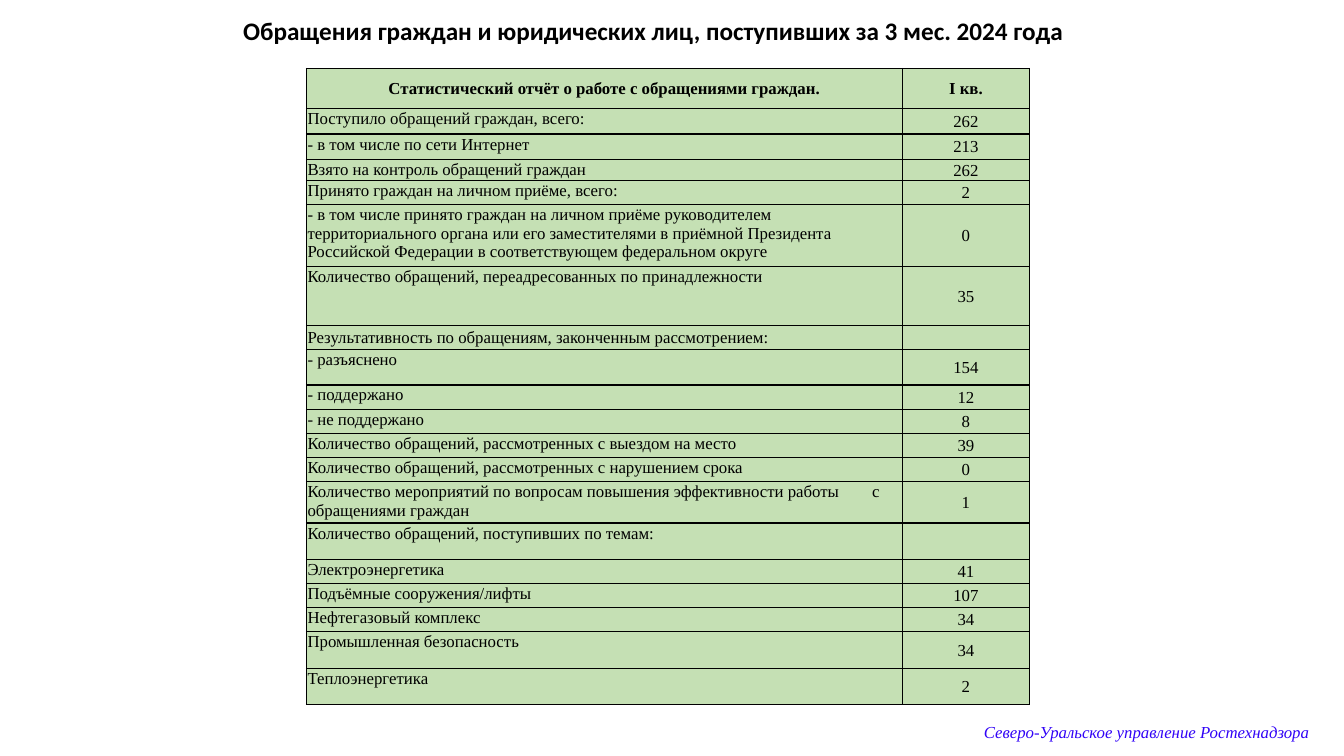
from lxml import etree
from pptx import Presentation
from pptx.dml.color import RGBColor
from pptx.enum import text
from pptx.oxml import ns
from pptx.util import Inches, Pt

SERIF = "Times New Roman"
BLACK, GREEN, BLUE = "000000", "C5E0B4", "3103F7"
HEADER = ("Статистический отчёт о работе с обращениями граждан.", "I кв.", 0.4)
# Indicator, value for the quarter, row height
INDICATORS = [
    ("Поступило обращений граждан, всего:", "262", 0.25),
    ("- в том числе по сети Интернет", "213", 0.25),
    ("Взято на контроль обращений граждан", "262", 0.21),
    ("Принято граждан на личном приёме, всего:", "2", 0.24),
    ("- в том числе принято граждан на личном приёме руководителем "
     "территориального органа или его заместителями в приёмной Президента "
     "Российской Федерации в соответствующем федеральном округе", "0", 0.54),
    ("Количество обращений, переадресованных по принадлежности", "35", 0.59),
    ("Результативность по обращениям, законченным рассмотрением:", "", 0.24),
    ("- разъяснено", "154", 0.35),
    ("- поддержано", "12", 0.24),
    ("- не поддержано", "8", 0.24),
    ("Количество обращений, рассмотренных с выездом на место", "39", 0.24),
    ("Количество обращений, рассмотренных с нарушением срока", "0", 0.24),
    ("Количество мероприятий по вопросам повышения эффективности работы\tс "
     "обращениями граждан", "1", 0.36),
    ("Количество обращений, поступивших по темам:", "", 0.36),
    ("Электроэнергетика", "41", 0.24),
    ("Подъёмные сооружения/лифты", "107", 0.24),
    ("Нефтегазовый комплекс", "34", 0.24),
    ("Промышленная безопасность", "34", 0.36),
    ("Теплоэнергетика", "2", 0.36),
]


def color(value):
    return RGBColor.from_string(value)


def set_font(paragraph, name, size, fill, bold=False, italic=False):
    font = paragraph.font
    font.name, font.size, font.bold, font.italic = name, Pt(size), bold, italic
    font.color.rgb = color(fill)


def add_borders(cell, fill, width):
    properties = cell._tc.get_or_add_tcPr()
    for index, side in enumerate(("a:lnL", "a:lnR", "a:lnT", "a:lnB")):
        line = etree.Element(ns.qn(side), w=str(Pt(width)))
        solid = etree.SubElement(line, ns.qn("a:solidFill"))
        etree.SubElement(solid, ns.qn("a:srgbClr"), val=fill)
        properties.insert(index, line)


def add_tab_stop(paragraph, position):
    stops = etree.SubElement(paragraph._p.get_or_add_pPr(), ns.qn("a:tabLst"))
    etree.SubElement(stops, ns.qn("a:tab"), pos=str(Inches(position)), algn="l")


def fill_cell(cell, content, centered, middle, bold):
    cell.fill.solid()
    cell.fill.fore_color.rgb = color(GREEN)
    add_borders(cell, BLACK, 1)
    cell.margin_left = cell.margin_right = cell.margin_top = Inches(0.01)
    cell.margin_bottom = 0
    cell.vertical_anchor = text.MSO_ANCHOR.MIDDLE if middle else text.MSO_ANCHOR.TOP
    paragraph = cell.text_frame.paragraphs[0]
    paragraph.alignment = text.PP_ALIGN.CENTER if centered else text.PP_ALIGN.LEFT
    if "\t" in content:
        add_tab_stop(paragraph, 5.6)
    set_font(paragraph, SERIF, 12, BLACK, bold=bold)
    if content:
        paragraph.add_run().text = content
    else:
        # An empty cell keeps its row low only with a small end mark
        etree.SubElement(paragraph._p, ns.qn("a:endParaRPr"), sz="1200")


def place_title(slide, left, top, width, height):
    title = slide.shapes.title
    title.left, title.top = Inches(left), Inches(top)
    title.width, title.height = Inches(width), Inches(height)
    title.text_frame.vertical_anchor = text.MSO_ANCHOR.MIDDLE
    heading = title.text_frame.paragraphs[0]
    heading.text = "Обращения граждан и юридических лиц, поступивших за 3 мес. 2024 года"
    heading.alignment = text.PP_ALIGN.CENTER
    heading.line_spacing = 0.9
    set_font(heading, "Calibri", 18, BLACK, bold=True)


def place_report(slide, left, top, width):
    rows = [HEADER] + INDICATORS
    height = sum(row[2] for row in rows)
    report = slide.shapes.add_table(
        len(rows), 2, Inches(left), Inches(top), Inches(width), Inches(height)).table
    value_width = 1.26
    report.columns[0].width = Inches(width - value_width)
    report.columns[1].width = Inches(value_width)
    for index, (indicator, value, row_height) in enumerate(rows):
        report.rows[index].height = Inches(row_height)
        is_header = index == 0
        is_middle = is_header or indicator.startswith("Результативность")
        fill_cell(report.cell(index, 0), indicator, is_header, is_middle, is_header)
        fill_cell(report.cell(index, 1), value, True, True, is_header)


def place_department(slide, left, top, width, height):
    box = slide.shapes.add_textbox(
        Inches(left), Inches(top), Inches(width), Inches(height))
    frame = box.text_frame
    frame.word_wrap = True
    frame.vertical_anchor = text.MSO_ANCHOR.MIDDLE
    department = frame.paragraphs[0]
    department.text = "Северо-Уральское управление Ростехнадзора"
    set_font(department, SERIF, 12, BLUE, italic=True)


def main():
    deck = Presentation()
    deck.slide_width, deck.slide_height = Inches(13.33), Inches(7.5)
    slide = deck.slides.add_slide(deck.slide_layouts[5])
    place_title(slide, 0.29, 0.09, 12.38, 0.46)
    place_department(slide, 9.66, 7.01, 3.52, 0.5)
    place_report(slide, 3.04, 0.68, 7.17)
    deck.save("out.pptx")


if __name__ == "__main__":
    main()
